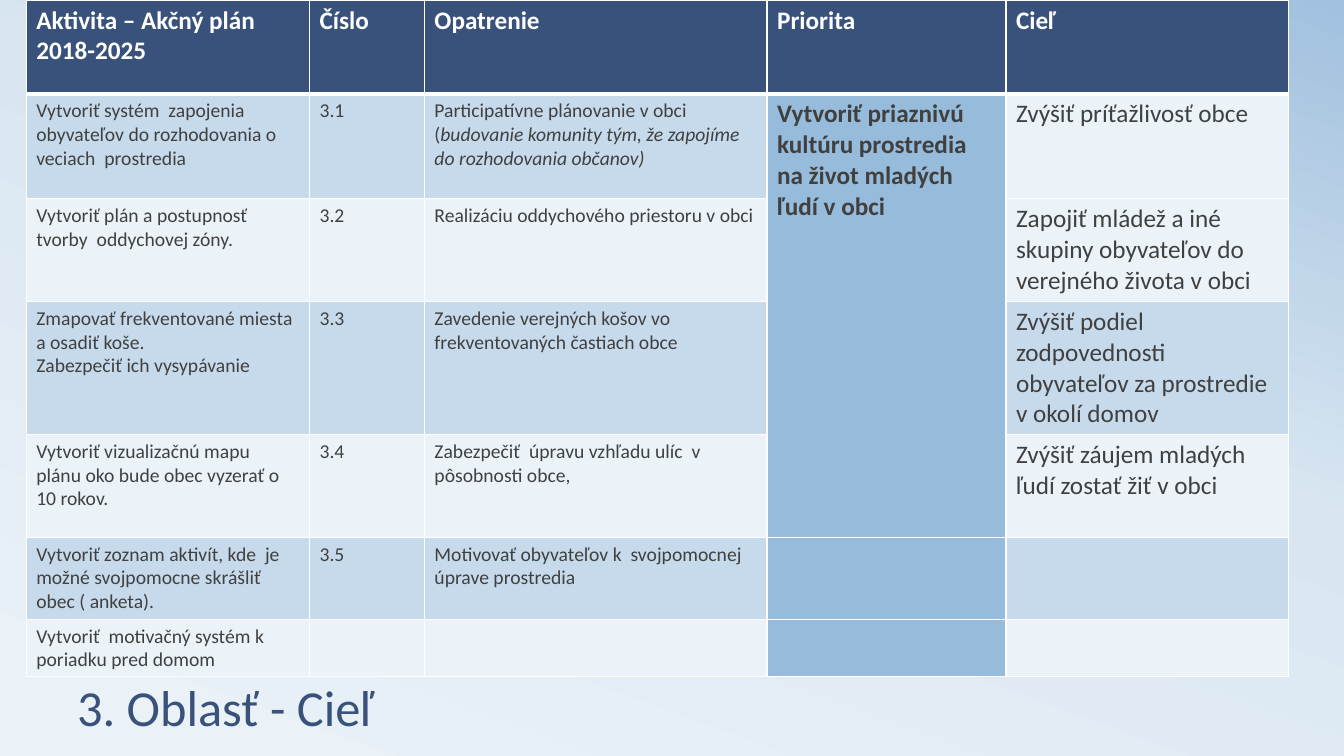
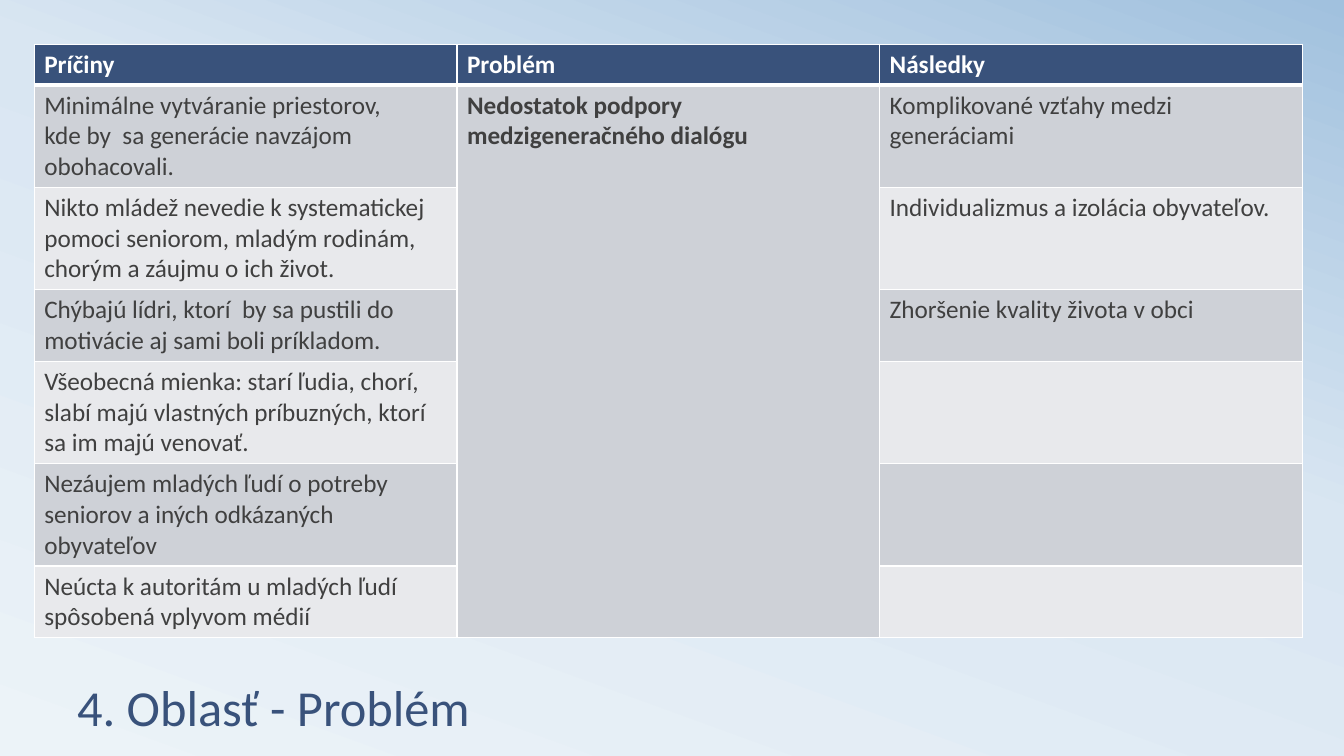
from copy import deepcopy

from lxml.etree import SubElement
from pptx import Presentation
from pptx.dml.color import RGBColor
from pptx.enum.text import MSO_ANCHOR
from pptx.oxml.ns import qn
from pptx.util import Inches, Pt

FONT = "Calibri"
NAVY = "39527B"
INK = "404040"
WHITE = "FFFFFF"
SKY = "97BBDA"
PALE = "ECF3F8"
BACKDROP = [(0, PALE), (0.58, "D9E6F2"), (1, "A1C1DE")]
LINE_ROWS = 4.07
PADDING_ROWS = 1.33


def color(code):
    return RGBColor.from_string(code)


def write(frame, text, size=18, shade=INK, bold=False, spacing=None):
    frame.word_wrap = True
    for number, line in enumerate(text.split("\n")):
        para = frame.add_paragraph() if number else frame.paragraphs[0]
        para.line_spacing = spacing
        for order, piece in enumerate(line.split("*")):
            if piece:
                span = para.add_run()
                span.text = piece
                span.font.name = FONT
                span.font.size = Pt(size)
                span.font.bold = bold
                span.font.italic = order % 2 == 1
                span.font.color.rgb = color(shade)


goal = {
    "title": "3. Oblasť - Cieľ",
    "left": 1.95,
    "top": 0,
    "widths": [21.08, 8.55, 25.5, 17.78, 21],
    "heights": [12.4, 13.9, 13.6, 17.6, 13.6, 10.85, 7.6],
    "sizes": [14, 14, 14, 18, 18],
    "bands": ["C7DAEB", PALE],
    "fills": {(row, 3): SKY for row in range(1, 7)} | {(1, 4): PALE},
    "merge": (1, 4, 3),
    "cells": [
        ["Aktivita – Akčný plán 2018-2025", "Číslo", "Opatrenie", "Priorita", "Cieľ"],
        [
            "Vytvoriť systém  zapojenia obyvateľov do rozhodovania o veciach  prostredia",
            "3.1",
            "Participatívne plánovanie v obci\n"
            "(*budovanie komunity tým, že zapojíme do rozhodovania občanov)*",
            "Vytvoriť priaznivú kultúru prostredia na život mladých ľudí v obci",
            "Zvýšiť príťažlivosť obce",
        ],
        [
            "Vytvoriť plán a postupnosť tvorby  oddychovej zóny.",
            "3.2",
            "Realizáciu oddychového priestoru v obci",
            "",
            "Zapojiť mládež a iné skupiny obyvateľov do verejného života v obci",
        ],
        [
            "Zmapovať frekventované miesta a osadiť koše.\nZabezpečiť ich vysypávanie",
            "3.3",
            "Zavedenie verejných košov vo frekventovaných častiach obce",
            "",
            "Zvýšiť podiel zodpovednosti obyvateľov za prostredie v okolí domov",
        ],
        [
            "Vytvoriť vizualizačnú mapu plánu oko bude obec vyzerať o 10 rokov.",
            "3.4",
            "Zabezpečiť  úpravu vzhľadu ulíc  v pôsobnosti obce,",
            "",
            "Zvýšiť záujem mladých ľudí zostať žiť v obci",
        ],
        [
            "Vytvoriť zoznam aktivít, kde  je možné svojpomocne skrášliť obec ( anketa).",
            "3.5",
            "Motivovať obyvateľov k  svojpomocnej úprave prostredia",
            "",
            "",
        ],
        ["Vytvoriť  motivačný systém k poriadku pred domom", "", "", "", ""],
    ],
}

problem = {
    "title": "4. Oblasť - Problém",
    "left": 2.55,
    "top": 5.85,
    "widths": [31.45] * 3,
    "heights": [PADDING_ROWS + LINE_ROWS * lines for lines in (1, 3, 3, 2, 3, 3, 2)],
    "sizes": [18] * 3,
    "bands": ["CED1D7", "E8E9EC"],
    "fills": {(row, 1): "CED1D7" for row in range(1, 7)},
    "merge": (1, 6, 1),
    "cells": [
        ["Príčiny", "Problém", "Následky"],
        [
            "Minimálne vytváranie priestorov,\nkde by  sa generácie navzájom obohacovali.",
            "Nedostatok podpory medzigeneračného dialógu",
            "Komplikované vzťahy medzi generáciami",
        ],
        [
            "Nikto mládež nevedie k systematickej pomoci seniorom, mladým rodinám, "
            "chorým a záujmu o ich život.",
            "",
            "Individualizmus a izolácia obyvateľov.",
        ],
        [
            "Chýbajú lídri, ktorí  by sa pustili do motivácie aj sami boli príkladom.",
            "",
            "Zhoršenie kvality života v obci",
        ],
        [
            "Všeobecná mienka: starí ľudia, chorí, slabí majú vlastných príbuzných, "
            "ktorí sa im majú venovať.",
            "",
            "",
        ],
        ["Nezáujem mladých ľudí o potreby seniorov a iných odkázaných obyvateľov", "", ""],
        ["Neúcta k autoritám u mladých ľudí spôsobená vplyvom médií", "", ""],
    ],
}

deck = Presentation()
deck.slide_width = Inches(13.33)
deck.slide_height = Inches(7.5)
column = deck.slide_width / 100
row = deck.slide_height / 100

backdrop = deck.slide_master.background.fill
backdrop.gradient()
backdrop.gradient_angle = 70
last_stop = list(deck.slide_master.element.iter(qn("a:gs")))[-1]
last_stop.addnext(deepcopy(last_stop))
for stop, (position, shade) in zip(backdrop.gradient_stops, BACKDROP):
    stop.position = position
    stop.color.rgb = color(shade)

for content in (goal, problem):
    page = deck.slides.add_slide(deck.slide_layouts[6])
    box = page.shapes.add_textbox(
        int(5 * column), int(82.5 * row), int(90 * column), int(15.6 * row)
    )
    box.text_frame.vertical_anchor = MSO_ANCHOR.BOTTOM
    write(box.text_frame, content["title"], size=36, shade=NAVY, spacing=0.8)

    widths, heights, cells = content["widths"], content["heights"], content["cells"]
    table = page.shapes.add_table(
        len(heights),
        len(widths),
        int(content["left"] * column),
        int(content["top"] * row),
        int(sum(widths) * column),
        int(sum(heights) * row),
    ).table
    table.first_row = False
    table.horz_banding = False
    for table_column, width in zip(table.columns, widths):
        table_column.width = int(width * column)
    for table_row, height in zip(table.rows, heights):
        table_row.height = int(height * row)

    first, last, merged = content["merge"]
    for y, texts in enumerate(cells):
        for x, text in enumerate(texts):
            cell = table.cell(y, x)
            header = y == 0
            band = NAVY if header else content["bands"][(y - 1) % 2]
            properties = cell._tc.get_or_add_tcPr()
            for side in "LRTB":
                thick = (header and side == "B") or (y == 1 and side == "T")
                border = SubElement(properties, qn(f"a:ln{side}"), w=str(Pt(3 if thick else 1)))
                paint = SubElement(border, qn("a:solidFill"))
                SubElement(paint, qn("a:srgbClr"), val=WHITE)
            cell.fill.solid()
            cell.fill.fore_color.rgb = color(content["fills"].get((y, x), band))
            write(
                cell.text_frame,
                text,
                size=18 if header else content["sizes"][x],
                shade=WHITE if header else INK,
                bold=header or x == merged,
            )
    table.cell(first, merged).merge(table.cell(last, merged))

deck.save("out.pptx")
